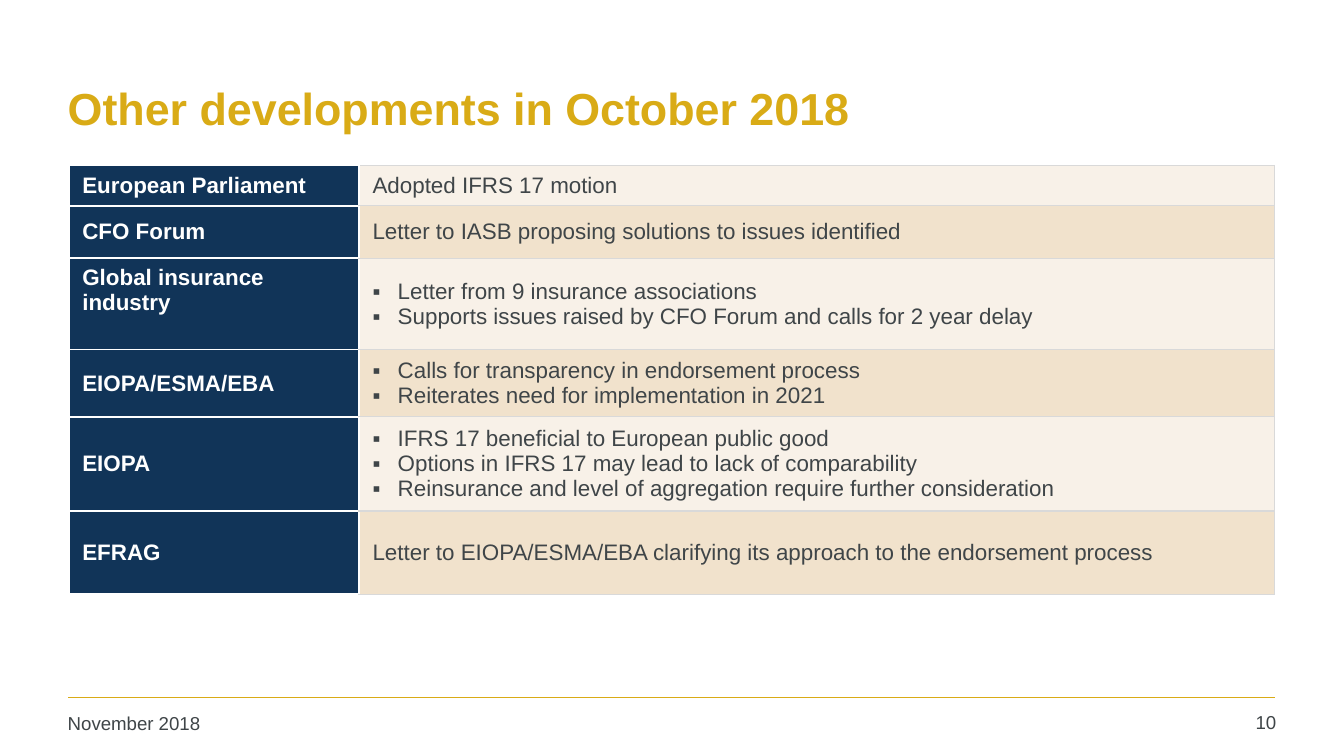
import pptx
import pptx.util
import pptx.dml.color
import pptx.enum.shapes
import pptx.enum.text
import pptx.oxml
import pptx.oxml.ns
from lxml import etree

Pt = pptx.util.Pt
ALIGN = pptx.enum.text.PP_ALIGN
ANCHOR = pptx.enum.text.MSO_ANCHOR

COLORS = {
    "gold": "D9AB16", "navy": "113458", "white": "FFFFFF", "text": "3F4548",
    "light": "F8F1E8", "sand": "F1E2CC", "grey": "D9D9D9",
}

# Content: label, row height, statement or list of bullet points
TITLE = "Other developments in October 2018"
DATE, PAGE = "November 2018", "10"
ROWS = [
    ("European Parliament", 20.9, "Adopted IFRS 17 motion"),
    ("CFO Forum", 28.1, "Letter to IASB proposing solutions to issues identified"),
    ("Global insurance industry", 49, [
        "Letter from 9 insurance associations",
        "Supports issues raised by CFO Forum and calls for 2 year delay"]),
    ("EIOPA/ESMA/EBA", 34.6, [
        "Calls for transparency in endorsement process",
        "Reiterates need for implementation in 2021"]),
    ("EIOPA", 49, [
        "IFRS 17 beneficial to European public good",
        "Options in IFRS 17 may lead to lack of comparability",
        "Reinsurance and level of aggregation require further consideration"]),
    ("EFRAG", 44.6,
     "Letter to EIOPA/ESMA/EBA clarifying its approach to the endorsement process"),
]
COL_WIDTHS = [155.5, 490.5]
TABLE_LEFT, TABLE_TOP = 36.9, 88.6
TOP_ANCHORED = "Global insurance industry"


def rgb(name):
    return pptx.dml.color.RGBColor.from_string(COLORS[name])


def write(tf, text, size=12, color="text", bold=False, align=ALIGN.LEFT):
    """Fill a text frame; a list becomes bullet points."""
    tf.word_wrap = True
    bulleted = isinstance(text, list)
    for i, line in enumerate(text if bulleted else [text]):
        p = tf.paragraphs[0] if i == 0 else tf.add_paragraph()
        if bulleted:
            pPr = p._p.get_or_add_pPr()
            pPr.set("marL", str(Pt(13.5)))
            pPr.set("indent", str(-Pt(13.5)))
            for tag, key, value in (("a:buFont", "typeface", "Arial"),
                                    ("a:buChar", "char", "▪")):
                etree.SubElement(pPr, pptx.oxml.ns.qn(tag)).set(key, value)
        p.alignment = align
        r = p.add_run()
        r.text = line
        r.font.name, r.font.size, r.font.bold = "Arial", Pt(size), bold
        r.font.color.rgb = rgb(color)


def add_text(s, box, text, anchor=ANCHOR.TOP, **fmt):
    tf = s.shapes.add_textbox(*map(Pt, box)).text_frame
    tf.margin_left = tf.margin_right = Pt(5.3)
    tf.margin_top = tf.margin_bottom = Pt(2.7)
    tf.vertical_anchor = anchor
    write(tf, text, **fmt)


def set_borders(cell, color, width):
    tcPr = cell._tc.get_or_add_tcPr()
    for i, side in enumerate(("lnL", "lnR", "lnT", "lnB")):
        tcPr.insert(i, pptx.oxml.parse_xml(
            f'<a:{side} {pptx.oxml.ns.nsdecls("a")} w="{Pt(width)}"><a:solidFill>'
            f'<a:srgbClr val="{COLORS[color]}"/></a:solidFill></a:{side}>'))


def style_cell(cell, text, fill, border, anchor=ANCHOR.MIDDLE, **fmt):
    cell.fill.solid()
    cell.fill.fore_color.rgb = rgb(fill)
    cell.vertical_anchor = anchor
    set_borders(cell, *border)
    write(cell.text_frame, text, **fmt)


prs = pptx.Presentation()
prs.slide_width, prs.slide_height = Pt(720), Pt(405)
s = prs.slides.add_slide(prs.slide_layouts[6])

# Footer rule
rule = s.shapes.add_connector(pptx.enum.shapes.MSO_CONNECTOR.STRAIGHT,
                              Pt(36.7), Pt(373.7), Pt(683.3), Pt(373.7))
rule.line.color.rgb = rgb("gold")
rule.line.width = Pt(1)
etree.SubElement(rule._element.spPr, pptx.oxml.ns.qn("a:effectLst"))

# Title and footer
add_text(s, (31, 23.8, 653, 67.7), TITLE, anchor=ANCHOR.MIDDLE,
         size=24, color="gold", bold=True)
add_text(s, (637.9, 378, 51.1, 20), PAGE, size=10, align=ALIGN.RIGHT)
add_text(s, (31, 378.7, 158.4, 19.4), DATE, size=10)

# Table
heights = [height for _, height, _ in ROWS]
table = s.shapes.add_table(len(ROWS), len(COL_WIDTHS), Pt(TABLE_LEFT), Pt(TABLE_TOP),
                           Pt(sum(COL_WIDTHS)), Pt(sum(heights))).table
table.first_row = table.horz_banding = False
for column, width in zip(table.columns, COL_WIDTHS):
    column.width = Pt(width)
for i, (label, height, detail) in enumerate(ROWS):
    table.rows[i].height = Pt(height)
    style_cell(table.cell(i, 0), label, "navy", ("white", 1), color="white", bold=True,
               anchor=ANCHOR.TOP if label == TOP_ANCHORED else ANCHOR.MIDDLE)
    style_cell(table.cell(i, 1), detail, ("light", "sand")[i % 2], ("grey", 0.75))

prs.save("out.pptx")
